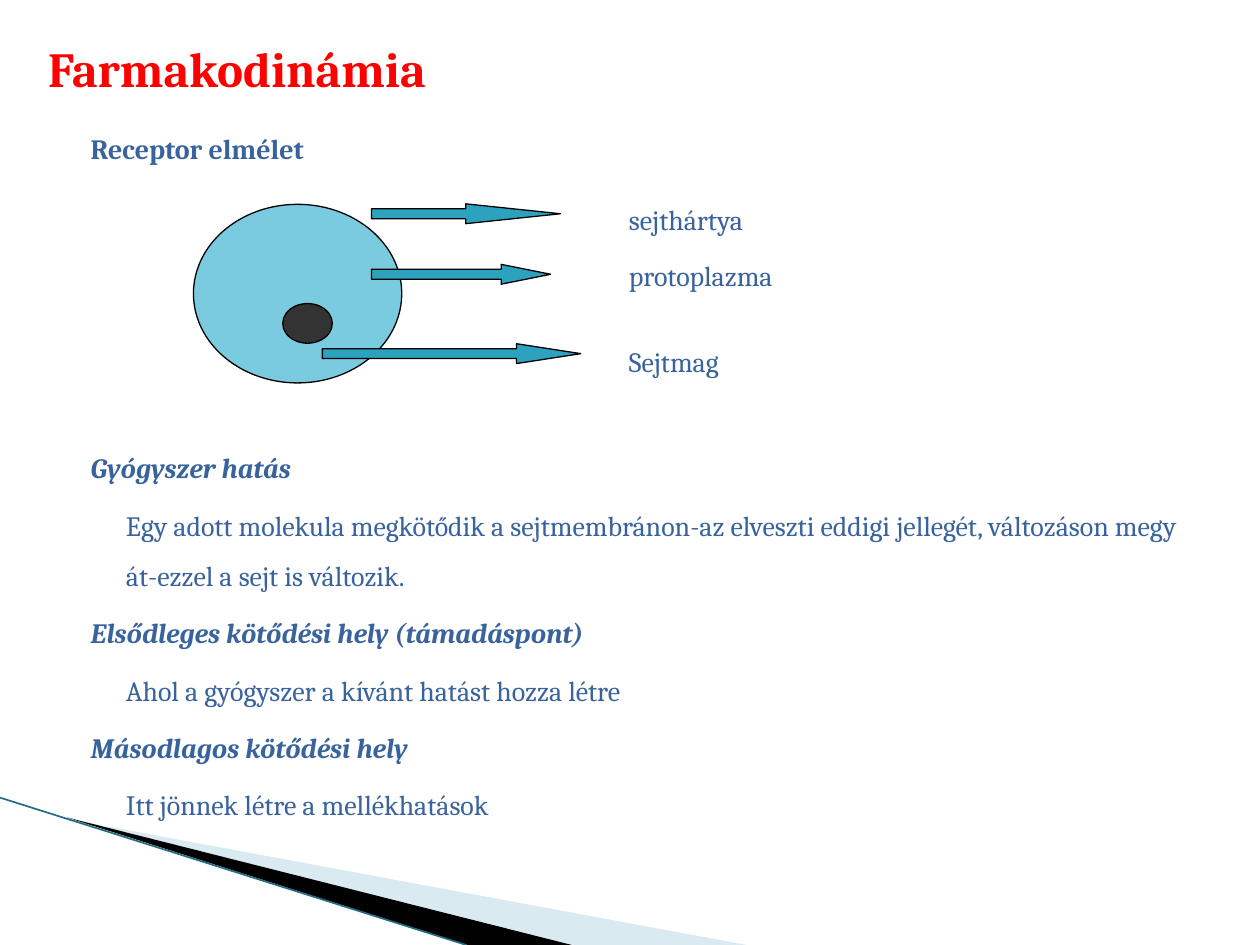
from dataclasses import dataclass
from lxml.etree import SubElement
from pptx import Presentation
from pptx.dml.color import RGBColor as RGB
from pptx.enum.shapes import MSO_CONNECTOR as Link, MSO_SHAPE as Kind
from pptx.enum.text import MSO_ANCHOR as Anchor
from pptx.oxml.ns import qn
from pptx.util import Cm, Pt


@dataclass(frozen=True)
class Theme:
    font: str = "Cambria"
    title: str = "FF0000"
    text: str = "39639D"
    cell: str = "7ACBE0"
    core: str = "333333"
    arrow: str = "2DA2BF"
    edge: str = "000000"
    pale: str = "A0CBDC"
    dark: str = "000000"
    rule: str = "1F6F82"
    big: int = 28
    body: int = 16


T = Theme()
LEFT = 1.83  # left edge of headings
STEP = 0.71  # indent of the explanations

LABELS = [("sejthártya", 4.42), ("protoplazma", 5.55), ("Sejtmag", 7.28)]

# left, top, width, head length relative to height
ARROWS = [(7.49, 4.11, 3.81, 4.78), (7.49, 5.33, 3.61, 2.49), (6.5, 6.93, 5.21, 3.24)]

NOTES = [
    ("Gyógyszer hatás",
     "Egy adott molekula megkötődik a sejtmembránon-az elveszti eddigi jellegét, "
     "változáson megy át-ezzel a sejt is változik."),
    ("Elsődleges kötődési hely (támadáspont)",
     "Ahol a gyógyszer a kívánt hatást hozza létre"),
    ("Másodlagos kötődési hely", "Itt jönnek létre a mellékhatások"),
]


def frame(slide, x, y, w, h, anchor=Anchor.MIDDLE):
    tf = slide.shapes.add_textbox(Cm(x), Cm(y), Cm(w), Cm(h)).text_frame
    tf.word_wrap = True
    tf.vertical_anchor = anchor
    tf.margin_left = tf.margin_right = tf.margin_top = tf.margin_bottom = 0
    return tf


def write(para, text, size=T.body, color=T.text, bold=False, italic=False,
          indent=0, space=None, before=0):
    para.line_spacing = space
    para.space_before = Pt(before)
    if indent:
        para._p.get_or_add_pPr().set("marL", str(Cm(indent)))
    run = para.add_run()
    run.text = text
    font = run.font
    font.name, font.size = T.font, Pt(size)
    font.bold, font.italic = bold, italic
    font.color.rgb = RGB.from_string(color)


def label(slide, text, x, mid, w=10, h=0.8, **style):
    write(frame(slide, x, mid - h / 2, w, h).paragraphs[0], text, **style)


def paint(shape, color, edge=None):
    shape.shadow.inherit = False
    shape.fill.solid()
    shape.fill.fore_color.rgb = RGB.from_string(color)
    if edge:
        shape.line.color.rgb = RGB.from_string(edge)
        shape.line.width = Pt(0.75)
    else:
        shape.line.fill.background()


def draw(slide, kind, x, y, w, h, color):
    shape = slide.shapes.add_shape(kind, Cm(x), Cm(y), Cm(w), Cm(h))
    paint(shape, color, T.edge)
    return shape


def wedge(slide, points, color, alpha=None):
    first, *rest = [(Cm(x), Cm(y)) for x, y in points]
    path = slide.shapes.build_freeform(*first, scale=1.0)
    path.add_line_segments(rest, close=True)
    shape = path.convert_to_shape()
    paint(shape, color)
    if alpha:
        tint = shape._element.spPr.find(qn("a:solidFill"))[0]
        SubElement(tint, qn("a:alpha")).set("val", str(alpha * 1000))


def rule(slide, x1, y1, x2, y2):
    line = slide.shapes.add_connector(Link.STRAIGHT, Cm(x1), Cm(y1), Cm(x2), Cm(y2))
    line.line.color.rgb = RGB.from_string(T.rule)
    line.line.width = Pt(0.95)
    SubElement(line._element.spPr, qn("a:effectLst"))


def corner(slide):
    wedge(slide, [(1.4, 16.52), (15.05, 19.05), (11.58, 19.05)], T.pale, alpha=40)
    wedge(slide, [(1.35, 16.48), (11.53, 19.05), (9.42, 19.05)], T.dark)
    rule(slide, 0, 16.08, 9.4, 19.05)


def cell(slide):
    draw(slide, Kind.FLOWCHART_CONNECTOR, 3.9, 4.12, 4.2, 3.6, T.cell)
    draw(slide, Kind.FLOWCHART_CONNECTOR, 5.7, 6.12, 1, 0.8, T.core)
    for x, y, w, head in ARROWS:
        arrow = draw(slide, Kind.RIGHT_ARROW, x, y, w, 0.4, T.arrow)
        arrow.adjustments[0] = 0.5
        arrow.adjustments[1] = head
    for text, mid in LABELS:
        label(slide, text, 12.68, mid)


def notes(slide):
    tf = frame(slide, LEFT, 8.75, 22.05, 8.2, Anchor.TOP)
    for i, (head, text) in enumerate(NOTES):
        para = tf.add_paragraph() if i else tf.paragraphs[0]
        write(para, head, bold=True, italic=True, space=1.5, before=4 if i else 0)
        write(tf.add_paragraph(), text, indent=STEP, space=1.5, before=4)


def main():
    prs = Presentation()
    prs.slide_width, prs.slide_height = Cm(25.4), Cm(19.05)
    slide = prs.slides.add_slide(prs.slide_layouts[6])
    # Background corner
    corner(slide)
    # Headings
    label(slide, "Farmakodinámia", 0.97, 1.36, w=23, h=2.7,
          size=T.big, color=T.title, bold=True)
    label(slide, "Receptor elmélet", LEFT, 3, bold=True)
    # Labelled cell
    cell(slide)
    # Explanations
    notes(slide)
    prs.save("out.pptx")


if __name__ == "__main__":
    main()
